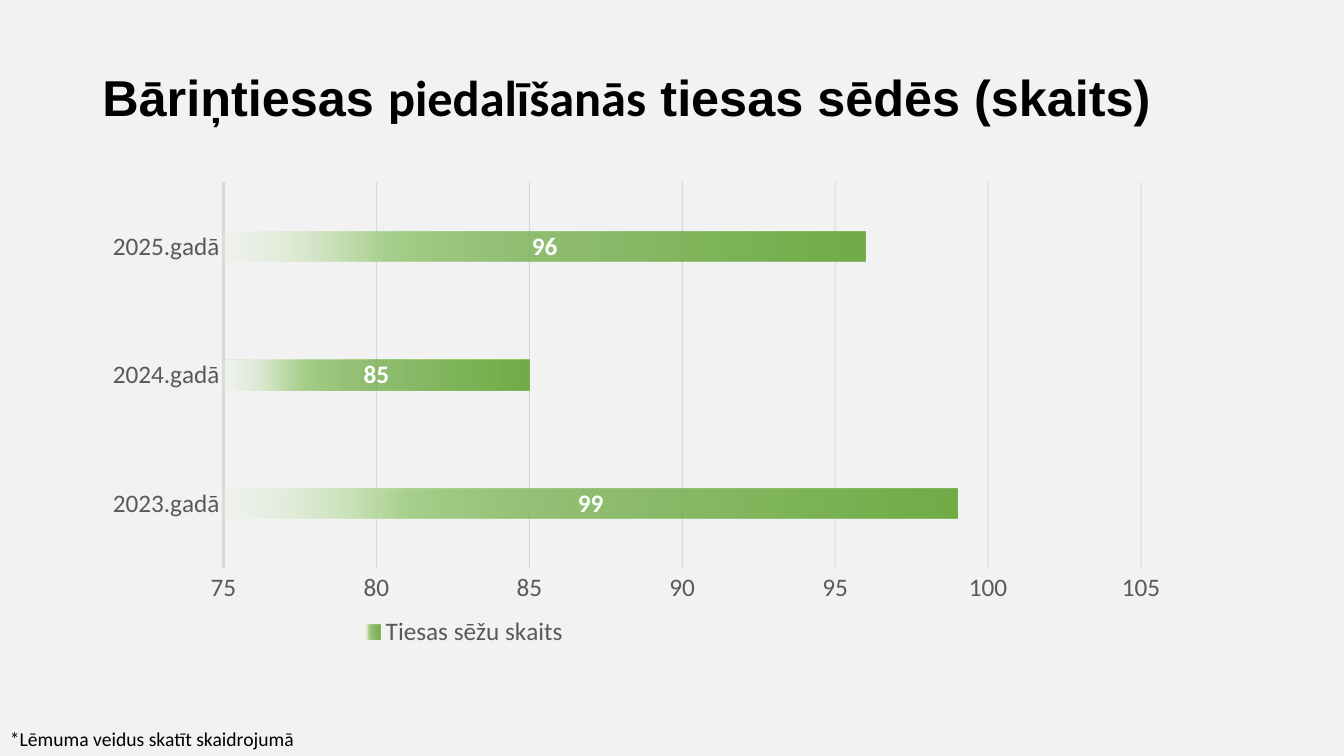
"""Build the slide on court hearings attended by the orphan's court."""
from pptx import Presentation
from pptx.chart.data import CategoryChartData
from pptx.dml.color import RGBColor
from pptx.enum.chart import XL_CHART_TYPE, XL_LABEL_POSITION, XL_LEGEND_POSITION, XL_TICK_MARK
from pptx.enum.text import MSO_ANCHOR
from pptx.oxml import parse_xml
from pptx.oxml.ns import nsdecls, qn
from pptx.util import Cm, Pt

COLORS = {
    "background": "F2F2F2",
    "text": "000000",
    "axis_text": "595959",
    "axis_line": "D9D9D9",
    "grid": "BFBFBF",
    "label": "FFFFFF",
    "green": "70AD47",
    "light_green": "A9D18E",
    "pale_green": "E2F0D9",
}


def add_text(text, left, top, width, height, size, fonts=("Calibri",), bold=False,
             anchor=MSO_ANCHOR.TOP, spacing=1.0):
    """Add a text box; parts of the text split by "|" take the fonts in turn."""
    shape = slide.shapes.add_textbox(Cm(left), Cm(top), Cm(width), Cm(height))
    frame = shape.text_frame
    frame.word_wrap = True
    frame.vertical_anchor = anchor
    paragraph = frame.paragraphs[0]
    paragraph.line_spacing = spacing
    for part, font_name in zip(text.split("|"), fonts):
        run = paragraph.add_run()
        run.text = part
        run.font.name = font_name
        run.font.size = Pt(size)
        run.font.bold = bold
        run.font.color.rgb = RGBColor.from_string(COLORS["text"])


def set_layout(element, index, target="", **fractions):
    """Place a chart part by fractions of the chart's size."""
    for layout in element.findall(qn("c:layout")):
        element.remove(layout)
    inner = f'<c:layoutTarget val="{target}"/>' if target else ""
    modes = '<c:xMode val="edge"/><c:yMode val="edge"/>'
    values = "".join(f'<c:{key} val="{value}"/>' for key, value in fractions.items())
    element.insert(index, parse_xml(
        f'<c:layout {nsdecls("c")}><c:manualLayout>{inner}{modes}{values}'
        '</c:manualLayout></c:layout>'))


presentation = Presentation()
presentation.slide_width = Cm(33.87)
presentation.slide_height = Cm(19.05)
slide = presentation.slides.add_slide(presentation.slide_layouts[6])
slide.background.fill.solid()
slide.background.fill.fore_color.rgb = RGBColor.from_string(COLORS["background"])

add_text("Bāriņtiesas |piedalīšanās| tiesas sēdēs (skaits)", 2.33, 1.45, 29.21, 2.13, 36,
         fonts=("Arial", "Calibri", "Arial"), bold=True, anchor=MSO_ANCHOR.MIDDLE, spacing=0.9)

chart_data = CategoryChartData()
chart_data.categories = ["2023.gadā", "2024.gadā", "2025.gadā"]
chart_data.add_series("Tiesas sēžu skaits", (99, 85, 96))
chart = slide.shapes.add_chart(XL_CHART_TYPE.BAR_CLUSTERED, Cm(2.33), Cm(4.34),
                               Cm(27.53), Cm(12.32), chart_data).chart
chart.has_title = False
chart.has_legend = True
legend = chart.legend
legend.position = XL_LEGEND_POSITION.BOTTOM
legend.include_in_layout = False

plot = chart.plots[0]
plot.gap_width = 326
plot.overlap = -58
plot.vary_by_categories = False
plot.has_data_labels = True
labels = plot.data_labels
labels.show_value = True
labels.position = XL_LABEL_POSITION.CENTER

category_axis, value_axis = chart.category_axis, chart.value_axis
for axis in (category_axis, value_axis):
    axis.major_tick_mark = XL_TICK_MARK.NONE
    axis.minor_tick_mark = XL_TICK_MARK.NONE
category_axis.format.line.color.rgb = RGBColor.from_string(COLORS["axis_line"])
category_axis.format.line.width = Pt(1.5)
value_axis.minimum_scale = 75
value_axis.maximum_scale = 105
value_axis.major_unit = 5
value_axis.format.line.fill.background()
value_axis.has_major_gridlines = True
grid_line = value_axis.major_gridlines.format.line
grid_line.width = Pt(0.75)
grid_line.color.rgb = RGBColor.from_string(COLORS["grid"])
grid_color = value_axis._element.find(".//" + qn("a:srgbClr"))
grid_color.append(parse_xml(f'<a:alpha {nsdecls("a")} val="50000"/>'))

for font, color in ((chart.font, "text"), (legend.font, "axis_text"), (labels.font, "label"),
                    (category_axis.tick_labels.font, "axis_text"),
                    (value_axis.tick_labels.font, "axis_text")):
    font.name = "Calibri"
    font.size = Pt(18)
    font.bold = color == "label"
    font.color.rgb = RGBColor.from_string(COLORS[color])

gradient_stops = "".join(
    f'<a:gs pos="{position * 1000}"><a:srgbClr val="{COLORS[color]}">'
    f'<a:alpha val="{opacity * 1000}"/></a:srgbClr></a:gs>'
    for position, color, opacity in ((0, "green", 100), (51, "green", 75),
                                     (75, "light_green", 100), (100, "pale_green", 15)))
plot.series[0]._element.get_or_add_spPr().insert(0, parse_xml(
    f'<a:gradFill {nsdecls("a")}><a:gsLst>{gradient_stops}</a:gsLst>'
    '<a:lin ang="10800000" scaled="0"/></a:gradFill>'))

set_layout(plot._element.getparent(), 0, target="inner", x=0.12, y=0.02, w=0.84, h=0.79)
set_layout(legend._element, 1, x=0.24, y=0.9, w=0.2, h=0.08)

add_text("*Lēmuma veidus skatīt skaidrojumā", 0, 18.19, 12.37, 0.86, 14)

presentation.save("out.pptx")
